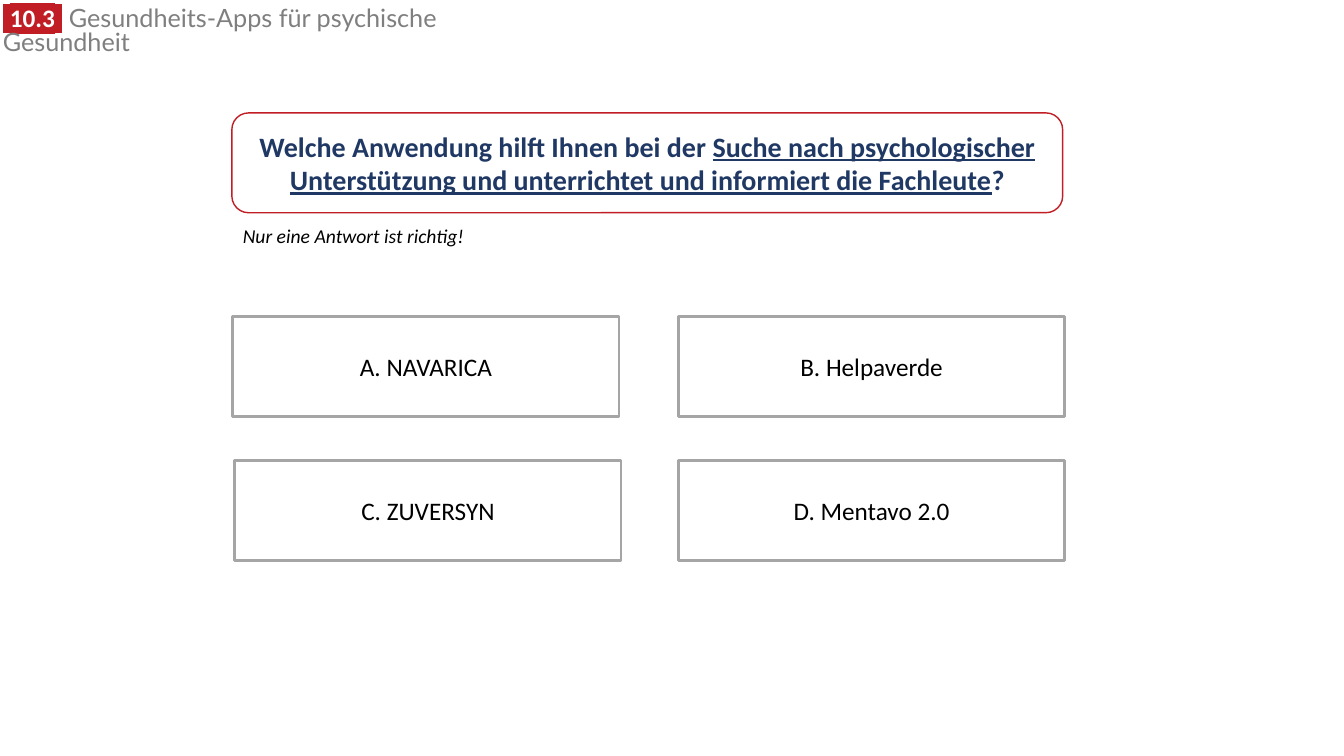
"""Build the quiz slide on health apps for mental health."""
from lxml import etree
from pptx import Presentation
from pptx import util as u
from pptx.dml.color import RGBColor
from pptx.enum import shapes, text
from pptx.oxml.ns import qn

RED = RGBColor(0xC0, 0x1E, 0x24)
NAVY = RGBColor(0x20, 0x38, 0x64)
GREY = RGBColor(0x7F, 0x7F, 0x7F)
SILVER = RGBColor(0xA5, 0xA5, 0xA5)
WHITE = RGBColor(0xFF, 0xFF, 0xFF)
BLACK = RGBColor(0, 0, 0)

BADGE = {"size": u.Pt(18), "name": "Arial", "bold": True, "color": WHITE, "highlight": RED}
TITLE = {"size": u.Pt(18), "name": "Lato", "color": GREY}
QUESTION = {"size": u.Pt(20), "name": "Calibri", "bold": True, "color": NAVY}
HINT = {"size": u.Pt(14), "name": "Calibri", "italic": True, "color": BLACK}
ANSWER = {"size": u.Pt(18), "name": "Calibri", "color": BLACK}

heading = [
    (" ", BADGE),
    ("10.3", BADGE | {"name": "Calibri"}),
    (" ", BADGE),
    (" ", TITLE | {"name": "Arial"}),
    ("Gesundheits-Apps für psychische Gesundheit", TITLE),
]
question = [
    ("Welche Anwendung hilft Ihnen bei der ", QUESTION),
    ("Suche nach psychologischer Unterstützung und unterrichtet und informiert die Fachleute",
     QUESTION | {"underline": True}),
    ("?", QUESTION),
]
hint = [("Nur eine Antwort ist richtig!", HINT)]
answers = [
    ("A. NAVARICA", 2.31, 3.14),
    ("B. Helpaverde", 6.73, 3.14),
    ("C. ZUVERSYN", 2.33, 4.57),
    ("D. Mentavo 2.0", 6.73, 4.57),
]
ANSWER_SIZE = (3.83, 0.99)


def write(frame, runs):
    frame.word_wrap = True
    paragraph = frame.paragraphs[0]
    for words, look in runs:
        run = paragraph.add_run()
        run.text = words
        for key, value in look.items():
            if key == "color":
                run.font.color.rgb = value
            elif key == "highlight":
                fill = run.font.color and run._r.rPr.find(qn("a:solidFill"))
                mark = etree.Element(qn("a:highlight"))
                etree.SubElement(mark, qn("a:srgbClr"), val=str(value))
                fill.addnext(mark)
            else:
                setattr(run.font, key, value)
    return paragraph


def add_text(slide, box, runs):
    label = slide.shapes.add_textbox(*map(u.Inches, box))
    paragraph = write(label.text_frame, runs)
    label.text_frame.auto_size = text.MSO_AUTO_SIZE.SHAPE_TO_FIT_TEXT
    return paragraph


def add_panel(slide, preset, box, outline, width, runs):
    panel = slide.shapes.add_shape(preset, *map(u.Inches, box))
    panel.shadow.inherit = False
    panel.fill.solid()
    panel.fill.fore_color.rgb = WHITE
    panel.line.color.rgb = outline
    panel.line.width = u.Pt(width)
    panel.text_frame.vertical_anchor = text.MSO_ANCHOR.MIDDLE
    write(panel.text_frame, runs).alignment = text.PP_ALIGN.CENTER


def main():
    deck = Presentation()
    deck.slide_width, deck.slide_height = u.Inches(13.33), u.Inches(7.5)
    slide = deck.slides.add_slide(deck.slide_layouts[6])
    add_text(slide, (-0.07, 0.03, 5.43, 0.34), heading).line_spacing = 0.8
    add_panel(slide, shapes.MSO_SHAPE.ROUNDED_RECTANGLE, (2.3, 1.12, 8.24, 0.99), RED, 1, question)
    add_text(slide, (2.31, 2.17, 2.91, 0.34), hint)
    for answer, left, top in answers:
        add_panel(slide, shapes.MSO_SHAPE.RECTANGLE, (left, top, *ANSWER_SIZE), SILVER, 2,
                  [(answer, ANSWER)])
    deck.save("out.pptx")


if __name__ == "__main__":
    main()
